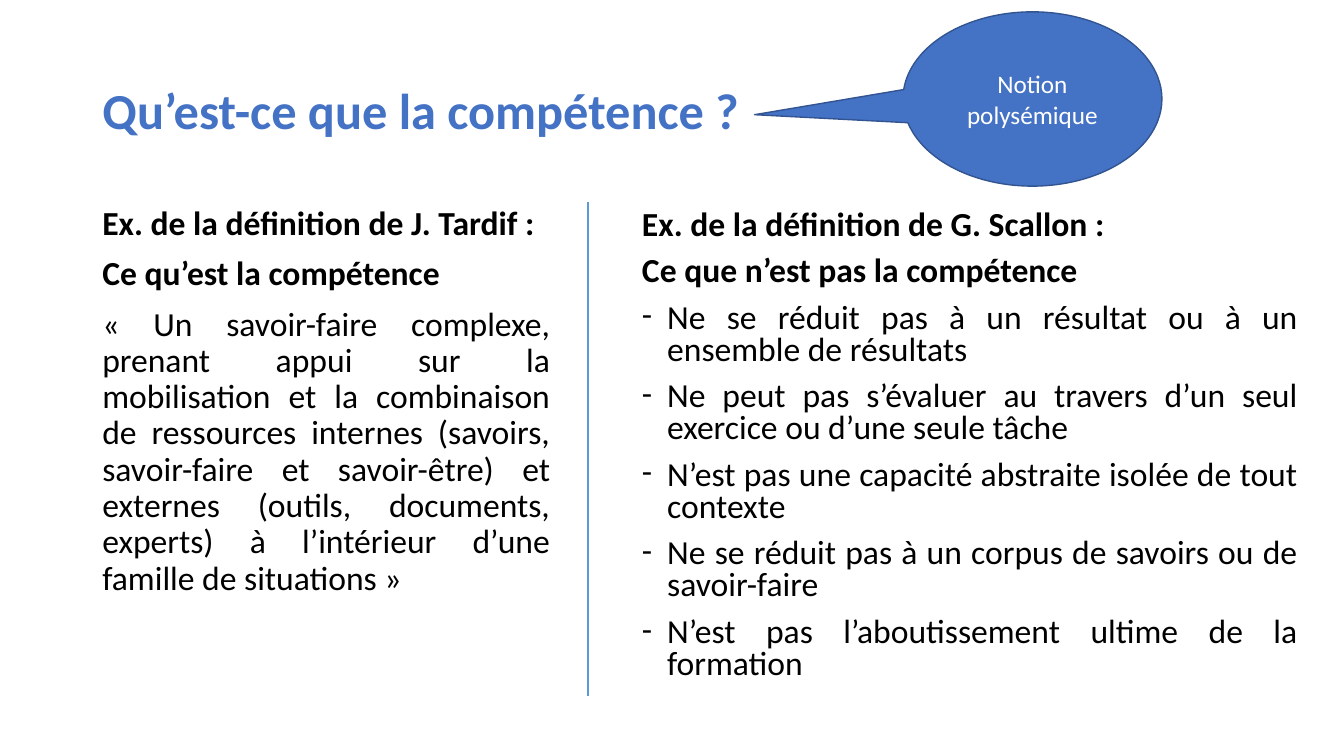
"""Build the slide that defines competence from two points of view."""
from lxml.etree import SubElement
from pptx import Presentation
from pptx.dml.color import RGBColor
from pptx.enum.shapes import MSO_CONNECTOR as Conn, MSO_SHAPE as Shape
from pptx.enum.text import MSO_ANCHOR as Anchor, MSO_AUTO_SIZE as Fit, PP_ALIGN as Align
from pptx.oxml.ns import qn
from pptx.util import Pt


def color(code):
    """Turn a hex string into a colour."""
    return RGBColor.from_string(code)


def write(para, text, size, code, bold=False):
    """Add one styled run to a paragraph."""
    run = para.add_run()
    run.text = text
    run.font.name = "Calibri"
    run.font.size = Pt(size)
    run.font.bold = bold
    run.font.color.rgb = color(code)


BLUE = "4472C4"

deck = Presentation()
deck.slide_width, deck.slide_height = Pt(960), Pt(540)
slide = deck.slides.add_slide(deck.slide_layouts[5])
shapes = slide.shapes

title = shapes.title
title.left, title.top, title.width, title.height = Pt(66), Pt(28.75), Pt(828), Pt(104.4)
frame = title.text_frame
frame.auto_size = Fit.NONE
frame.word_wrap = True
frame.vertical_anchor = Anchor.MIDDLE
para = frame.paragraphs[0]
para.alignment = Align.LEFT
para.line_spacing = 0.9
write(para, "Qu’est-ce que la compétence ?", 36, BLUE, True)

bubble = shapes.add_shape(Shape.OVAL_CALLOUT, Pt(645), Pt(8.5), Pt(185), Pt(124.5))
bubble.adjustments[0], bubble.adjustments[1] = -1.073, 0.09
bubble.shadow.inherit = False
bubble.fill.solid()
bubble.fill.fore_color.rgb = color(BLUE)
bubble.line.color.rgb = color("325491")
bubble.line.width = Pt(1)
frame = bubble.text_frame
frame.word_wrap = True
frame.vertical_anchor = Anchor.MIDDLE
para = frame.paragraphs[0]
para.alignment = Align.CENTER
write(para, "Notion polysémique", 18, "FFFFFF")

columns = [
    ((66, 144, 334, 343), 0.9, False,
     ["Ex. de la définition de J. Tardif :", "Ce qu’est la compétence"],
     ["« Un savoir-faire complexe, prenant appui sur la mobilisation et la "
      "combinaison de ressources internes (savoirs, savoir-faire et savoir-être) "
      "et externes (outils, documents, experts) à l’intérieur d’une famille de "
      "situations »"]),
    ((451.5, 147, 482.5, 367), 0.8, True,
     ["Ex. de la définition de G. Scallon :", "Ce que n’est pas la compétence"],
     ["Ne se réduit pas à un résultat ou à un ensemble de résultats",
      "Ne peut pas s’évaluer au travers d’un seul exercice ou d’une seule tâche",
      "N’est pas une capacité abstraite isolée de tout contexte",
      "Ne se réduit pas à un corpus de savoirs ou de savoir-faire",
      "N’est pas l’aboutissement ultime de la formation"]),
]
for area, pitch, dashed, heads, points in columns:
    frame = shapes.add_textbox(*map(Pt, area)).text_frame
    frame.word_wrap = True
    for i, text in enumerate(heads + points):
        para = frame.paragraphs[0] if i == 0 else frame.add_paragraph()
        para.alignment = Align.JUSTIFY
        para.line_spacing = pitch
        para.space_before = Pt(10)
        head = i < len(heads)
        write(para, text, 24, "000000", head)
        if dashed and not head:
            props = para._p.get_or_add_pPr()
            props.set("marL", str(Pt(18)))
            props.set("indent", str(Pt(-18)))
            SubElement(props, qn("a:buFont")).set("typeface", "Calibri")
            SubElement(props, qn("a:buChar")).set("char", "-")

rule = shapes.add_connector(Conn.STRAIGHT, Pt(420), Pt(144), Pt(420), Pt(497))
rule.line.color.rgb = color("5B9BD5")
rule.line.width = Pt(1.5)
SubElement(rule._element.spPr, qn("a:effectLst"))

deck.save("out.pptx")
